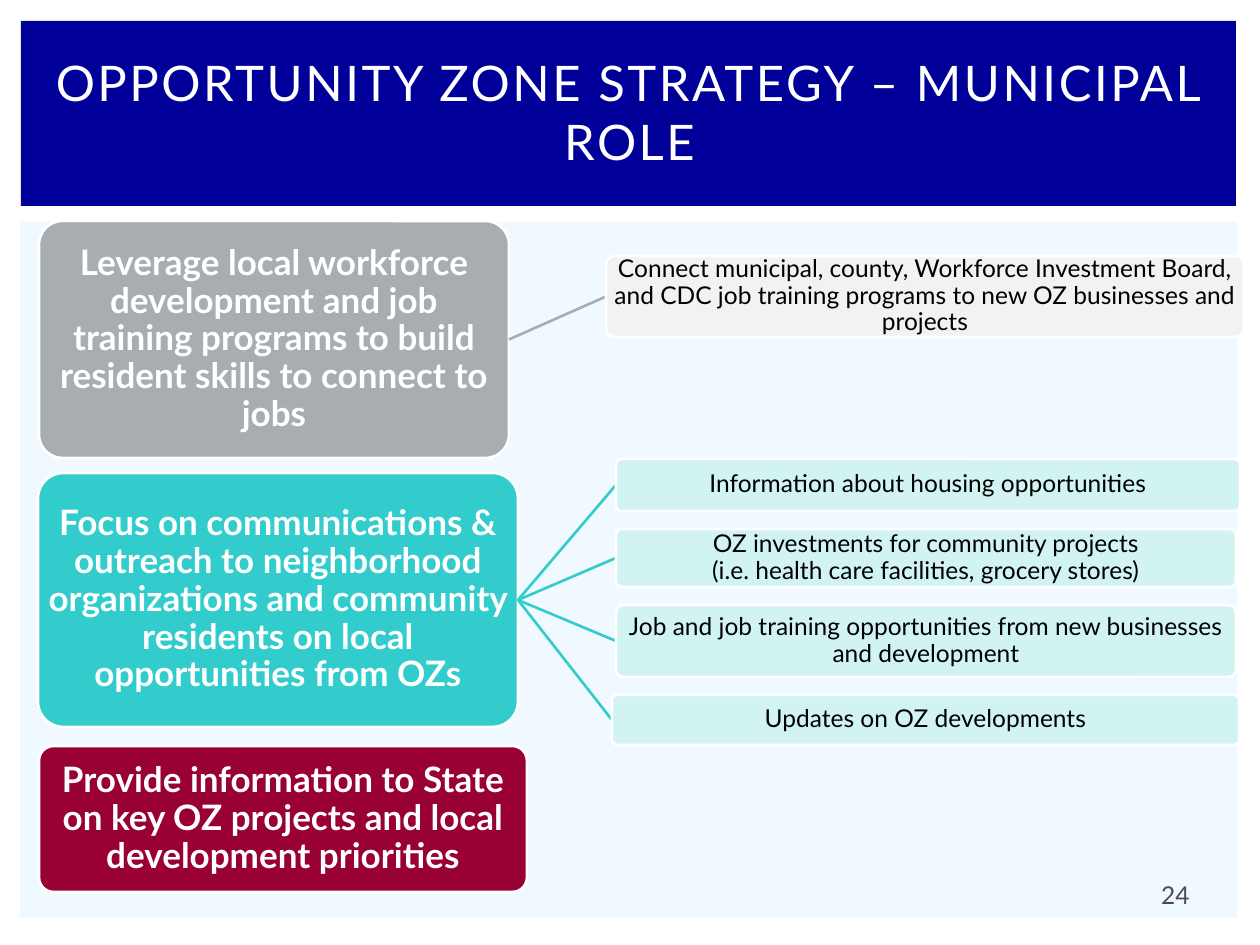
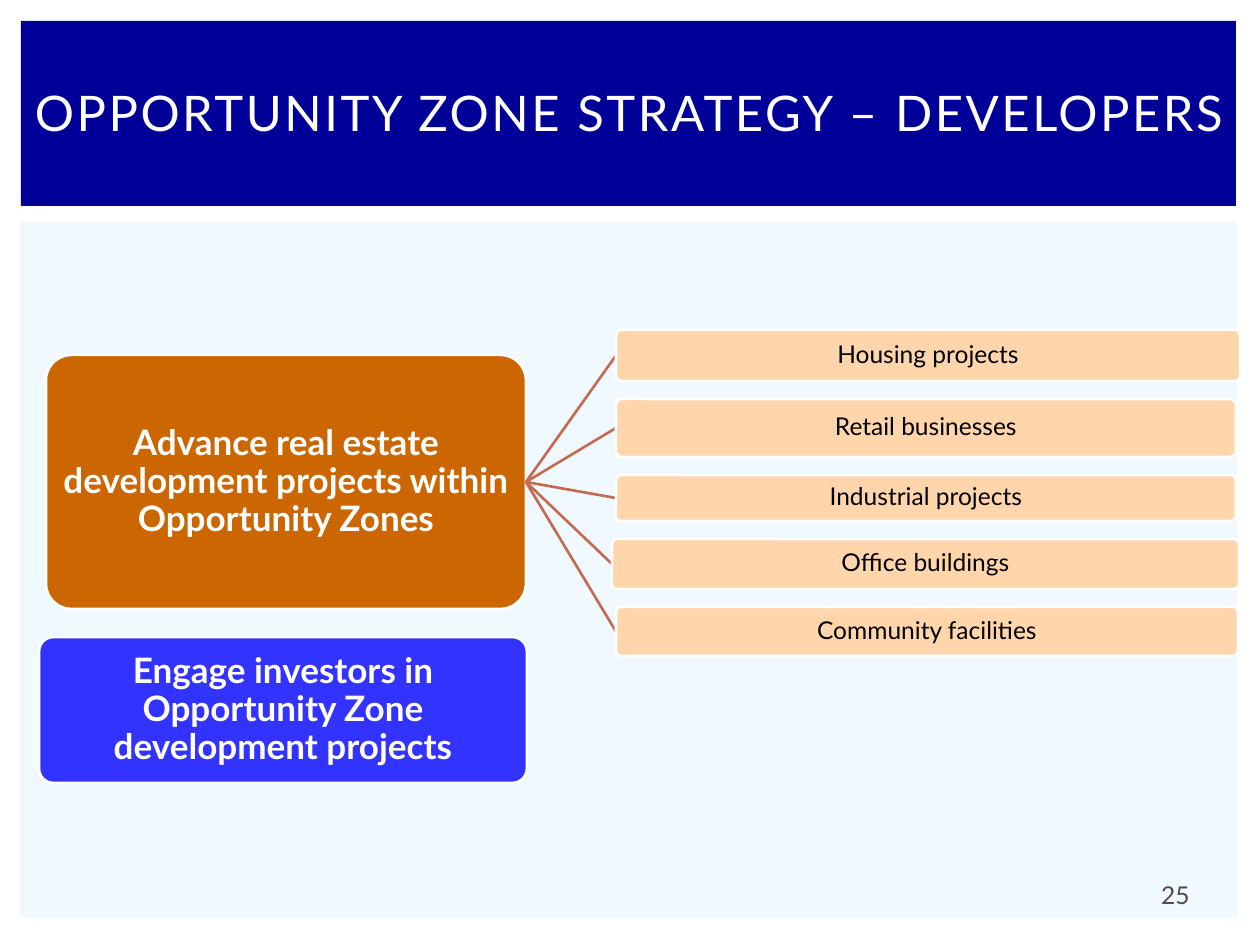
from pptx import Presentation
from pptx.dml.color import RGBColor
from pptx.enum.shapes import MSO_CONNECTOR as Connector, MSO_SHAPE as Shape
from pptx.enum.text import MSO_ANCHOR as Anchor, PP_ALIGN as Align
from pptx.oxml.ns import qn
from pptx.util import Pt
from lxml.etree import SubElement

# Shared look
EMU_PER_PX = 914400 / 126
FONT = "Lato"
WHITE, BLACK = "FFFFFF", "000000"
NAVY, PANEL, NUMBER_GREY = "000099", "EFF9FF", "534949"
TITLE_STYLE = {"size": 28, "color": WHITE}
NUMBER_STYLE = {"size": 14, "color": NUMBER_GREY}
TOPIC_STYLE = {"size": 20, "color": WHITE, "bold": True, "spacing": 0.9}
DETAIL_STYLE = {"size": 14, "color": BLACK, "spacing": 0.9}
DETAIL_GAP = 18

# Each topic: text, frame, fill, link colour, detail fill, top of details,
# and the details as (text, left, width, height)
SLIDES = [
    ("OPPORTUNITY ZONE STRATEGY – MUNICIPAL ROLE", 24, [
        ("Leverage local workforce development and job training programs "
         "to build resident skills to connect to jobs",
         (39, 221, 470, 237), "A8ADB2", "A8ADB2", "F2F2F2", 256, [
             ("Connect municipal, county, Workforce Investment Board, and CDC "
              "job training programs to new OZ businesses and projects",
              606, 638, 81)]),
        ("Focus on communications & outreach to neighborhood organizations "
         "and community residents on local opportunities from OZs",
         (38, 473, 480, 254), "33CCCC", "33CCCC", "D1F4F3", 459, [
             ("Information about housing opportunities", 616, 624, 52),
             ("OZ investments for community projects\v"
              "(i.e. health care facilities, grocery stores)", 616, 620, 58),
             ("Job and job training opportunities from new businesses "
              "and development", 616, 620, 72),
             ("Updates on OZ developments", 612, 627, 50)]),
        ("Provide information to State on key OZ projects and local "
         "development priorities",
         (39, 746, 488, 146), "990033", None, None, 0, []),
    ]),
    ("OPPORTUNITY ZONE STRATEGY – DEVELOPERS", 25, [
        ("Advance real estate development projects within Opportunity Zones",
         (46, 355, 480, 254), "CC6600", "C66951", "FFD5AB", 330, [
             ("Housing projects", 616, 624, 51),
             ("Retail businesses", 616, 620, 58),
             ("Industrial projects", 616, 620, 46),
             ("Office buildings", 612, 627, 50),
             ("Community facilities", 616, 622, 49)]),
        ("Engage investors in Opportunity Zone development projects",
         (39, 637, 488, 146), "3333FF", None, None, 0, []),
    ]),
]


def px(length):
    return round(length * EMU_PER_PX)


def rgb(code):
    return RGBColor.from_string(code)


def write(box, text, style, inset=None):
    """Put centred text in a shape or text box."""
    frame = box.text_frame
    settings = {"word_wrap": True, "vertical_anchor": Anchor.MIDDLE}
    if inset is not None:
        for side in ("left", "right", "top", "bottom"):
            settings[f"margin_{side}"] = px(inset)
    for name, value in settings.items():
        setattr(frame, name, value)
    frame.text = text
    para = frame.paragraphs[0]
    para.alignment = Align.CENTER
    para.line_spacing = style.get("spacing", 1.0)
    look = {"name": FONT, "size": Pt(style["size"]),
            "bold": style.get("bold", False)}
    for span in para.runs:
        for name, value in look.items():
            setattr(span.font, name, value)
        span.font.color.rgb = rgb(style["color"])
    return para


def add_block(page, kind, frame, fill):
    box = page.shapes.add_shape(kind, *map(px, frame))
    box.shadow.inherit = False
    box.fill.solid()
    box.fill.fore_color.rgb = rgb(fill)
    box.line.fill.background()
    return box


def add_card(page, frame, fill, text, style):
    """Rounded card with a white outline."""
    card = add_block(page, Shape.ROUNDED_RECTANGLE, frame, fill)
    card.adjustments[0] = 0.1
    card.line.color.rgb = rgb(WHITE)
    card.line.width = Pt(1.5)
    write(card, text, style, inset=1)
    return card


def add_link(page, topic, detail, color):
    """Line from a topic's right side to a detail's left side."""
    link = page.shapes.add_connector(Connector.STRAIGHT, 0, 0, 0, 0)
    link.begin_connect(topic, 3)
    link.end_connect(detail, 1)
    link.line.color.rgb = rgb(color)
    link.line.width = Pt(1.5)
    SubElement(link._element.spPr, qn("a:effectLst"))
    # Keep the line beneath the detail's outline
    detail._element.addprevious(link._element)


def add_label(page, frame, text, style):
    return write(page.shapes.add_textbox(*map(px, frame)), text, style)


def add_base(deck, title, number):
    """Page with panel, title band and page number."""
    page = deck.slides.add_slide(deck.slide_layouts[6])
    add_block(page, Shape.RECTANGLE, (20, 222, 1217, 696), PANEL)
    add_block(page, Shape.RECTANGLE, (21, 21, 1215, 185), NAVY)
    heading = add_label(page, (21, 39, 1217, 145), title, TITLE_STYLE)
    for span in heading.runs:
        span.font._element.set("spc", "150")
    add_label(page, (1135, 876, 81, 38), str(number), NUMBER_STYLE)
    return page


def add_topic(page, text, frame, fill, link_color, detail_fill, top, details):
    """Topic card with its stack of linked details."""
    topic = add_card(page, frame, fill, text, TOPIC_STYLE)
    for detail_text, left, width, height in details:
        detail = add_card(page, (left, top, width, height), detail_fill,
                          detail_text, DETAIL_STYLE)
        add_link(page, topic, detail, link_color)
        top += height + DETAIL_GAP


def main():
    deck = Presentation()
    deck.slide_width, deck.slide_height = px(1260), px(945)
    for title, number, topics in SLIDES:
        page = add_base(deck, title, number)
        for topic in topics:
            add_topic(page, *topic)
    deck.save("out.pptx")


if __name__ == "__main__":
    main()
